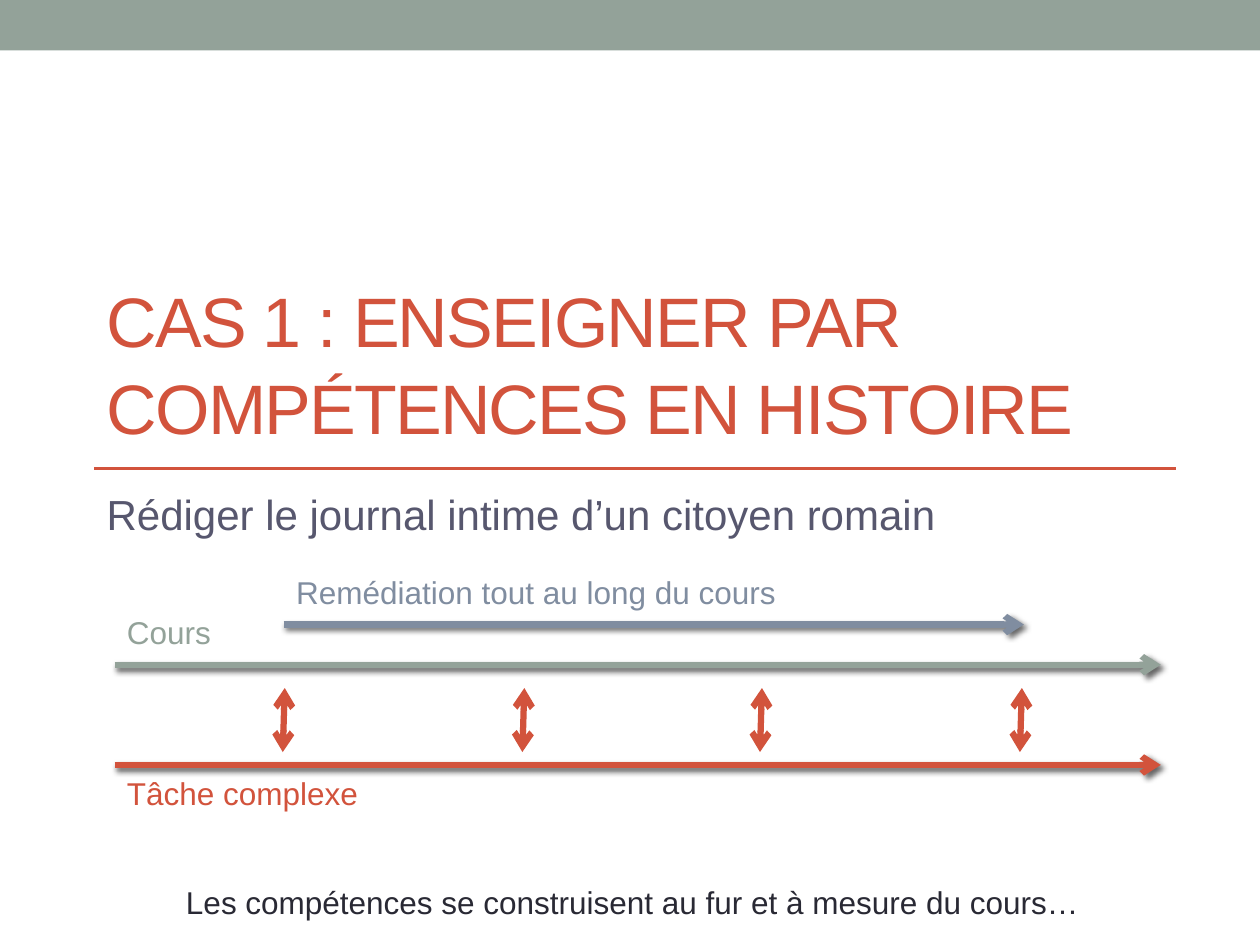
import pptx
import pptx.util
import pptx.dml.color
import pptx.enum.shapes
import pptx.enum.text
import pptx.oxml
import pptx.oxml.ns
from lxml import etree

Cm = pptx.util.Cm
Pt = pptx.util.Pt
RGB = pptx.dml.color.RGBColor.from_string
ALIGN = pptx.enum.text.PP_ALIGN
ANCHOR = pptx.enum.text.MSO_ANCHOR

COLORS = {
    "sage": "93A299",
    "red": "D2533C",
    "slate": "57576E",
    "blue": "808DA0",
    "dark": "292934",
    "shadow": "000000",
}

prs = pptx.Presentation()
prs.slide_width, prs.slide_height = Cm(25.4), Cm(19.05)
s = prs.slides.add_slide(prs.slide_layouts[6])


def add_text(text, x, y, w, h, color, size=18, align=ALIGN.LEFT, anchor=ANCHOR.TOP,
             wrap=True, before=0, line=None, spacing=None):
    tf = s.shapes.add_textbox(Cm(x), Cm(y), Cm(w), Cm(h)).text_frame
    tf.word_wrap = wrap
    tf.vertical_anchor = anchor
    p = tf.paragraphs[0]
    p.alignment = align
    p.space_before = Pt(before)
    if line:
        p.line_spacing = line
    r = p.add_run()
    r.text = text
    r.font.name = "Arial"
    r.font.size = Pt(size)
    r.font.color.rgb = RGB(COLORS[color])
    if spacing:
        r.font._element.set("spc", str(spacing))


def add_line(x1, y1, x2, y2, color, width, ends=(), shadow=False):
    sp = s.shapes.add_connector(pptx.enum.shapes.MSO_CONNECTOR.STRAIGHT,
                                Cm(x1), Cm(y1), Cm(x2), Cm(y2))
    sp.line.color.rgb = RGB(COLORS[color])
    sp.line.width = Pt(width)
    qn = pptx.oxml.ns.qn
    for end in ends:
        etree.SubElement(sp.line._get_or_add_ln(), qn(f"a:{end}"), type="arrow")
    effects = etree.SubElement(sp._element.spPr, qn("a:effectLst"))
    if shadow:
        outer = etree.SubElement(effects, qn("a:outerShdw"), blurRad=str(Pt(3)),
                                 dist=str(Pt(2)), dir=str(45 * 60000),
                                 algn="tl", rotWithShape="0")
        clr = etree.SubElement(outer, qn("a:srgbClr"), val=COLORS["shadow"])
        etree.SubElement(clr, qn("a:alpha"), val="60000")


# Top band and rule under the title
sp = s.shapes.add_shape(pptx.enum.shapes.MSO_SHAPE.RECTANGLE, 0, 0, prs.slide_width, Cm(1.02))
sp.shadow.inherit = False
sp.fill.solid()
sp.fill.fore_color.rgb = RGB(COLORS["sage"])
sp.line.fill.background()
add_line(1.9, 9.45, 23.7, 9.45, "red", 1.5)

# Title and subtitle
add_text("CAS 1 : ENSEIGNER PAR COMPÉTENCES EN HISTOIRE", 1.9, 3.81, 21.8, 5.36, "red",
         size=40, anchor=ANCHOR.BOTTOM, line=1.04, spacing=-100)
add_text("Rédiger le journal intime d’un citoyen romain", 1.9, 9.73, 17.78, 4.88, "slate",
         size=24, before=4.8)

# Double arrows linking the course and the task
for x in (5.74, 10.57, 15.36, 20.6):
    add_line(x, 13.87, x - 0.04, 15.16, "red", 3.58, ends=("headEnd", "tailEnd"))

# Timelines with their labels: text, left, right, line y, label y, label width, colour
for text, x1, x2, y, label_y, w, color in (
    ("Cours", 2.31, 23.4, 13.4, 12.24, 2.24, "sage"),
    ("Tâche complexe", 2.31, 23.4, 15.42, 15.47, 5.2, "red"),
    ("Remédiation tout au long du cours", 5.72, 20.64, 12.59, 11.42, 10.29, "blue"),
):
    add_line(x1, y, x2, y, color, 3.5, ends=("tailEnd",), shadow=True)
    add_text(text, x1, label_y, w, 1.02, color, wrap=False)

# Closing remark
add_text("Les compétences se construisent au fur et à mesure du cours…",
         2.41, 17.68, 20.68, 1.02, "dark", align=ALIGN.CENTER)

prs.save("out.pptx")
